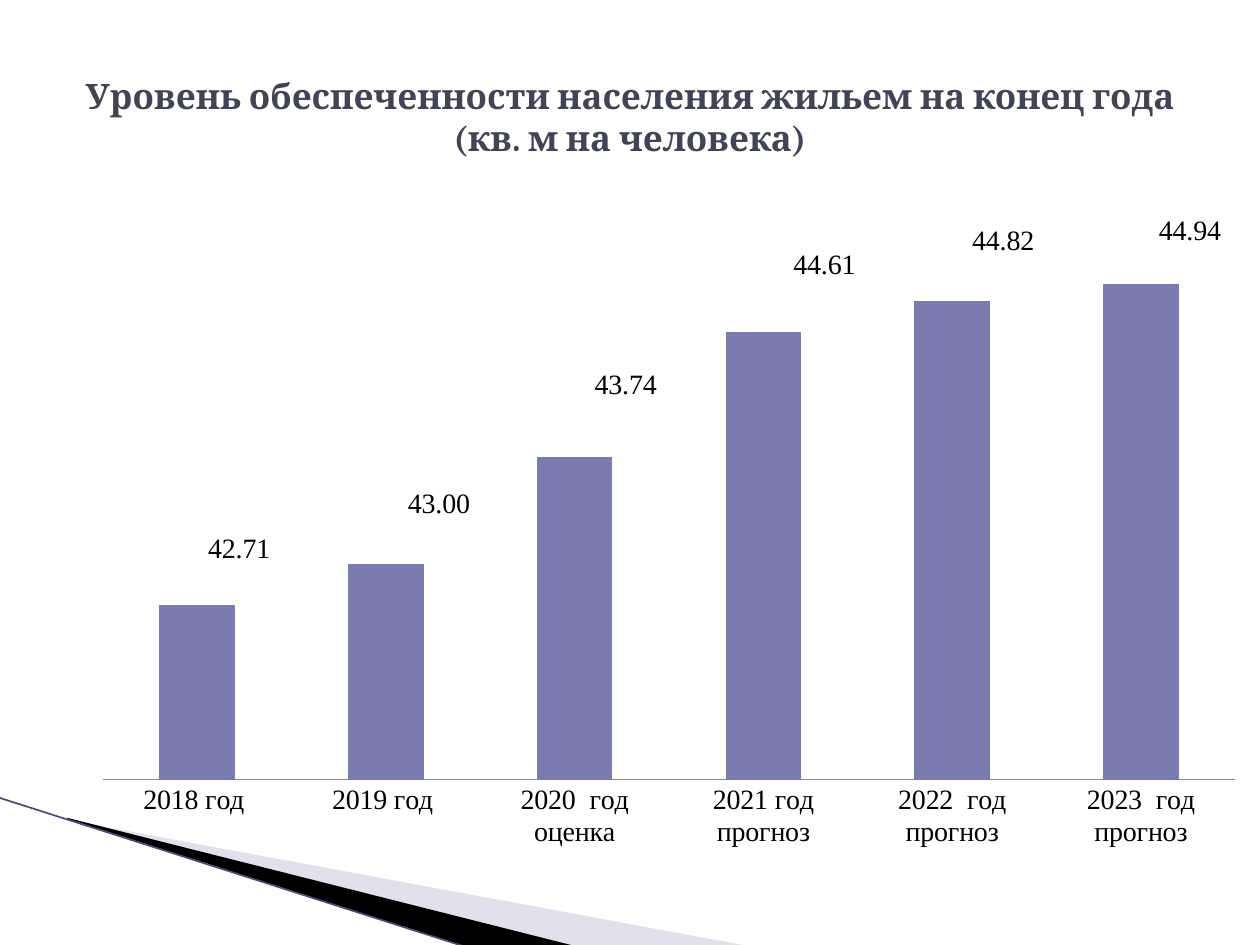
from lxml import etree
from pptx import Presentation
from pptx.chart.data import CategoryChartData
from pptx.dml.color import RGBColor
from pptx.enum.chart import XL_CHART_TYPE, XL_LABEL_POSITION, XL_TICK_MARK
from pptx.enum.shapes import MSO_CONNECTOR
from pptx.enum.text import MSO_ANCHOR, PP_ALIGN
from pptx.oxml import parse_xml
from pptx.oxml.ns import nsdecls, qn
from pptx.util import Inches, Pt

COLUMNS = XL_CHART_TYPE.COLUMN_CLUSTERED
OUTSIDE = XL_LABEL_POSITION.OUTSIDE_END
NO_TICK = XL_TICK_MARK.NONE
STRAIGHT = MSO_CONNECTOR.STRAIGHT
MIDDLE = MSO_ANCHOR.MIDDLE
CENTER = PP_ALIGN.CENTER

BLACK = RGBColor(0x00, 0x00, 0x00)
SLATE = RGBColor(0x42, 0x44, 0x56)
VIOLET = RGBColor(0x7A, 0x7B, 0xAE)
LILAC = RGBColor(0xB6, 0xB6, 0xD1)
INDIGO = RGBColor(0x4B, 0x4A, 0x78)
GRAY = RGBColor(0x86, 0x86, 0x86)

TITLE_FONT = "Cambria"
CHART_FONT = "DejaVu Sans Mono"
LABEL_FONT = "Times New Roman"
NUMBER_FORMAT = "#,##0.00"

HOUSING = [
    ("2018 год ", 42.71, (42, -35)),
    ("2019 год ", 43.00, (53, -39)),
    ("2020  год оценка", 43.74, (51, -51)),
    ("2021 год прогноз", 44.61, (61, -46)),
    ("2022  год прогноз", 44.82, (51, -39)),
    ("2023  год прогноз", 44.94, (49, -32)),
]
CHART_WIDTH, CHART_HEIGHT = 9.3, 5.46
OFFSETS_PER_INCH = 126
UNITS_PER_INCH = 100
C15 = "http://schemas.microsoft.com/office/drawing/2012/chart"
LEADER_URI = "{CE6537A1-D6FC-4f65-9D91-7224C49458BB}"


def manual_layout(**settings):
    """Return a chart layout element with the given settings."""
    parts = "".join(f'<c:{name} val="{value}"/>' for name, value in settings.items())
    return parse_xml(
        f'<c:layout {nsdecls("c")}><c:manualLayout>{parts}</c:manualLayout></c:layout>'
    )


class SlideBuilder:
    """Hold the current slide and draw styled elements on it."""

    def __init__(self, page):
        self.page = page

    def style(self, font, name, size, color=BLACK, bold=False):
        """Apply one text style to a font."""
        font.name, font.size, font.bold = name, Pt(size), bold
        font.color.rgb = color

    def wedge(self, points, color, opacity=100):
        """Draw a filled outline through the points."""
        corners = [(x * UNITS_PER_INCH, y * UNITS_PER_INCH) for x, y in points]
        scale = Inches(1) / UNITS_PER_INCH
        builder = self.page.shapes.build_freeform(*corners[0], scale=scale)
        builder.add_line_segments(corners[1:], close=True)
        shape = builder.convert_to_shape()
        shape.shadow.inherit = False
        shape.fill.solid()
        shape.fill.fore_color.rgb = color
        shape.line.fill.background()
        if opacity < 100:
            fill = shape.fill._xPr.find(qn("a:solidFill"))[0]
            etree.SubElement(fill, qn("a:alpha")).set("val", str(opacity * 1000))

    def line(self, start, end, color, width):
        """Draw a straight line."""
        ends = [Inches(value) for value in (*start, *end)]
        connector = self.page.shapes.add_connector(STRAIGHT, *ends)
        connector.line.color.rgb = color
        connector.line.width = Pt(width)
        etree.SubElement(connector._element.spPr, qn("a:effectLst"))

    def title(self, text, left, top, width, height):
        """Fill and place the title above the other elements."""
        title = self.page.shapes.title
        title.left, title.top = Inches(left), Inches(top)
        title.width, title.height = Inches(width), Inches(height)
        frame = title.text_frame
        frame.text = text
        frame.word_wrap = True
        frame.vertical_anchor = MIDDLE
        para = frame.paragraphs[0]
        para.alignment = CENTER
        for span in para.runs:
            self.style(span.font, TITLE_FONT, 20, SLATE, True)
        self.page.shapes._spTree.append(title._element)

    def columns(self, rows, left, top):
        """Draw the column chart with shifted value labels."""
        data = CategoryChartData(number_format=NUMBER_FORMAT)
        data.categories = [row[0] for row in rows]
        data.add_series("Series 1", [row[1] for row in rows])
        area = [Inches(value) for value in (left, top, CHART_WIDTH, CHART_HEIGHT)]
        chart = self.page.shapes.add_chart(COLUMNS, *area, data).chart
        chart.has_legend = chart.has_title = False
        self.style(chart.font, CHART_FONT, 18)

        plot_area = chart._chartSpace.chart.plotArea
        for layout in plot_area.findall(qn("c:layout")):
            plot_area.remove(layout)
        plot_area.insert(0, manual_layout(
            layoutTarget="inner", xMode="edge", yMode="edge",
            x=0.033, y=0.041, w=0.967, h=0.838))

        categories = chart.category_axis
        categories.major_tick_mark = categories.minor_tick_mark = NO_TICK
        categories.format.line.color.rgb = GRAY
        self.style(categories.tick_labels.font, LABEL_FONT, 16)
        values = chart.value_axis
        values.minimum_scale, values.maximum_scale = 41.5, 45.5
        values.has_major_gridlines = values.visible = False
        values.tick_labels.number_format = NUMBER_FORMAT
        values.tick_labels.number_format_is_linked = False

        plot = chart.plots[0]
        plot.gap_width = 150
        plot.vary_by_categories = False
        series = plot.series[0]
        series.format.fill.solid()
        series.format.fill.fore_color.rgb = VIOLET
        labels = series.data_labels
        labels.show_value = True
        labels.number_format = NUMBER_FORMAT
        labels.number_format_is_linked = False
        labels.position = OUTSIDE
        self.style(labels.font, LABEL_FONT, 16)
        for index, (_, _, offset) in enumerate(rows):
            self.shift_label(series.points[index].data_label, *offset)
        for element in labels._element.findall(qn("c:dLbl")):
            element.insert(2, parse_xml(
                f'<c:numFmt {nsdecls("c")} formatCode="{NUMBER_FORMAT}" sourceLinked="0"/>'))
        self.hide_leaders(labels._element)

    def shift_label(self, label, across, down):
        """Move one value label away from its column."""
        self.style(label.font, LABEL_FONT, 16)
        label.position = OUTSIDE
        element = label._get_or_add_dLbl()
        element.insert(1, manual_layout(
            x=round(across / OFFSETS_PER_INCH / CHART_WIDTH, 4),
            y=round(down / OFFSETS_PER_INCH / CHART_HEIGHT, 4)))

    def hide_leaders(self, element):
        """Turn off the lines between columns and labels."""
        for leader in element.findall(qn("c:showLeaderLines")):
            element.remove(leader)
        etree.SubElement(element, qn("c:showLeaderLines")).set("val", "0")
        element.append(parse_xml(
            f'<c:extLst {nsdecls("c")}><c:ext uri="{LEADER_URI}" xmlns:c15="{C15}">'
            '<c15:showLeaderLines val="0"/></c:ext></c:extLst>'))


def main():
    """Build and save the housing slide."""
    deck = Presentation()
    deck.slide_width, deck.slide_height = Inches(10), Inches(7.5)
    builder = SlideBuilder(deck.slides.add_slide(deck.slide_layouts[5]))
    builder.wedge([(0.55, 6.51), (5.95, 7.51), (4.56, 7.51), (0.55, 6.5)], LILAC, 40)
    builder.wedge([(0.53, 6.49), (4.57, 7.51), (3.72, 7.52), (0.54, 6.5)], BLACK)
    builder.line((-0.01, 6.33), (3.71, 7.52), INDIGO, 0.95)
    builder.columns(HOUSING, 0.51, 1.39)
    builder.title(
        "Уровень обеспеченности населения жильем на конец года\v(кв. м на человека)",
        0.5, 0.3, 9, 1.25)
    deck.save("out.pptx")


if __name__ == "__main__":
    main()
